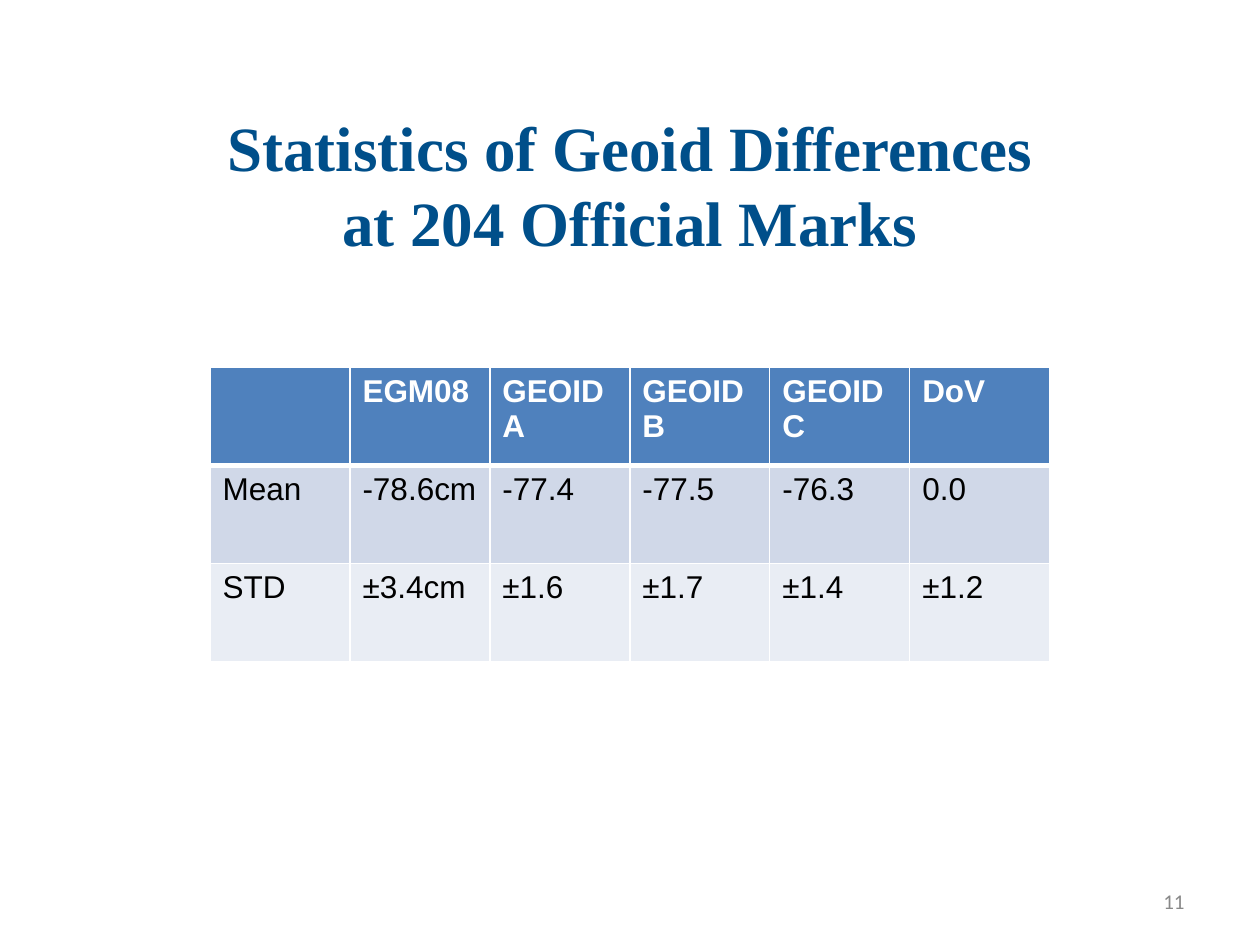
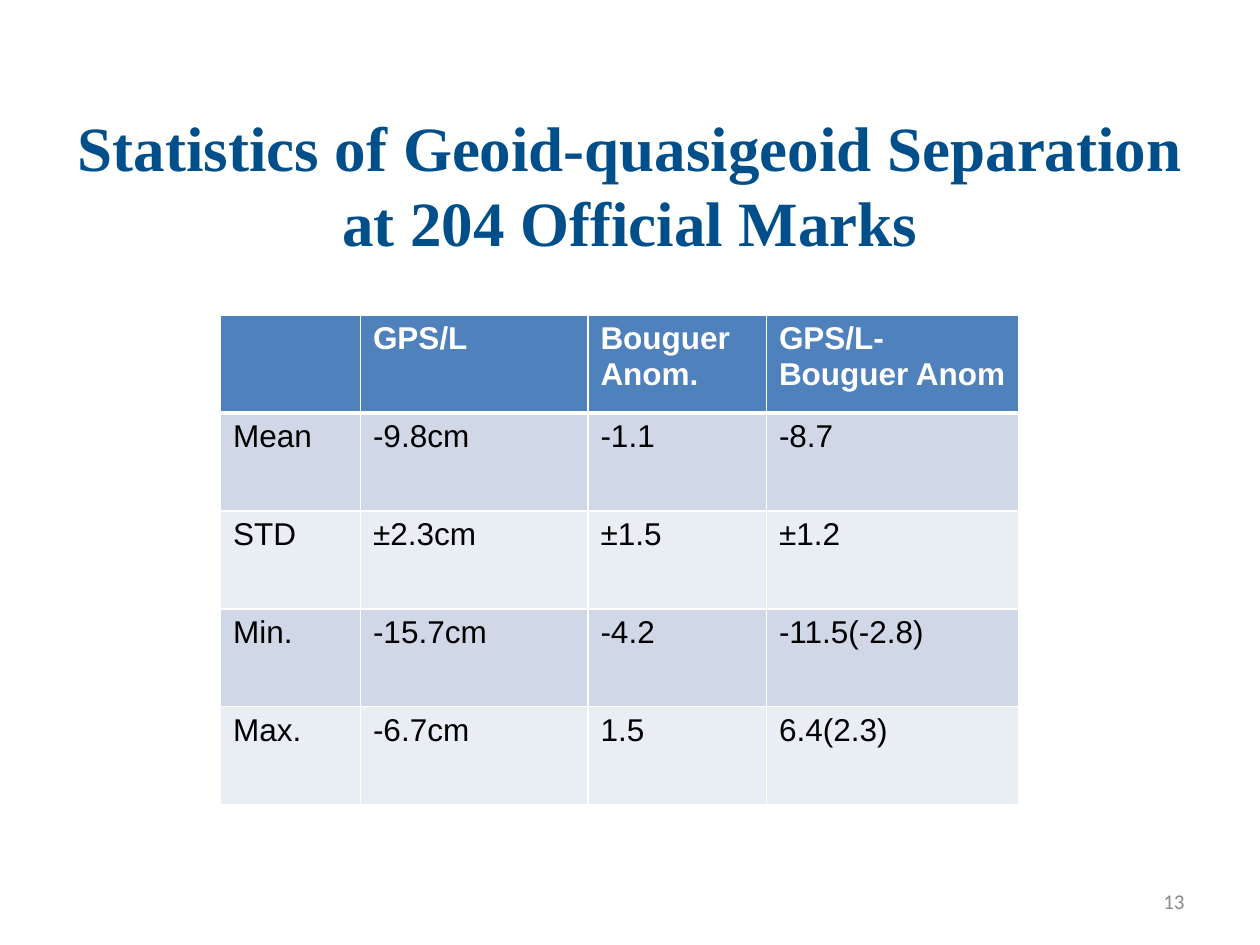
from dataclasses import dataclass
from lxml.etree import SubElement
from pptx import Presentation
from pptx.dml.color import RGBColor
from pptx.enum.text import MSO_ANCHOR, PP_ALIGN
from pptx.oxml.ns import qn
from pptx.util import Inches, Pt


@dataclass(frozen=True)
class Theme:
    # Colours
    white: str = "FFFFFF"
    navy: str = "004F8A"
    grey: str = "898989"
    black: str = "000000"
    head: str = "4F81BD"
    bands: tuple = ("D0D8E8", "E9EDF4")
    # Type: font name, size, bold
    title: tuple = ("Times New Roman", 36, True)
    label: tuple = ("Arial", 18, True)
    value: tuple = ("Arial", 18, False)
    number: tuple = ("Calibri", 12, False)
    # Rule widths in points
    thin: int = 1
    thick: int = 3


class Deck:
    """Places elements on a grid of 120 columns by 90 rows."""

    cols, rows = 120, 90

    def __init__(self, theme):
        self.theme = theme
        self.file = Presentation()
        self.file.slide_width, self.file.slide_height = Inches(10), Inches(7.5)
        self.slide = None

    def x(self, count):
        return round(self.file.slide_width * count / self.cols)

    def y(self, count):
        return round(self.file.slide_height * count / self.rows)

    def style(self, frame, kind, color):
        name, size, bold = kind
        form = {"name": name, "size": Pt(size), "bold": bold}
        for para in frame.paragraphs:
            for run in para.runs:
                for key, value in form.items():
                    setattr(run.font, key, value)
                run.font.color.rgb = RGBColor.from_string(color)

    def text(self, words, place, kind, color, align):
        left, top, width, height = place
        box = self.slide.shapes.add_textbox(
            self.x(left), self.y(top), self.x(width), self.y(height))
        frame = box.text_frame
        frame.word_wrap = True
        frame.vertical_anchor = MSO_ANCHOR.MIDDLE
        para = frame.paragraphs[0]
        para.text = words
        para.alignment = align
        self.style(frame, kind, color)

    def page(self, title, number):
        look = self.theme
        self.slide = self.file.slides.add_slide(self.file.slide_layouts[6])
        self.text(title, (6, 9, 108, 17), look.title, look.navy, PP_ALIGN.CENTER)
        self.text(str(number), (86, 83.4, 28, 4.8), look.number, look.grey,
                  PP_ALIGN.RIGHT)

    def border(self, cell, widths):
        props = cell._tc.get_or_add_tcPr()
        for side, width in widths.items():
            line = SubElement(props, qn(f"a:ln{side}"), w=str(Pt(width)))
            fill = SubElement(line, qn("a:solidFill"))
            SubElement(fill, qn("a:srgbClr"), val=self.theme.white)

    def table(self, left, top, widths, high, data):
        look = self.theme
        grid = self.slide.shapes.add_table(
            len(data), len(widths), self.x(left), self.y(top),
            self.x(sum(widths)), self.y(high * len(data))).table
        for col, width in zip(grid.columns, widths):
            col.width = self.x(width)
        for r, line in enumerate(data):
            # Header row, then alternating bands
            if r == 0:
                kind, color, fill = look.label, look.white, look.head
            else:
                kind, color, fill = look.value, look.black, look.bands[(r - 1) % 2]
            for c, words in enumerate(line):
                cell = grid.cell(r, c)
                self.border(cell, {
                    "L": look.thin, "R": look.thin,
                    "T": look.thick if r == 1 else look.thin,
                    "B": look.thick if r == 0 else look.thin})
                cell.fill.solid()
                cell.fill.fore_color.rgb = RGBColor.from_string(fill)
                cell.text = words
                self.style(cell.text_frame, kind, color)


def main():
    deck = Deck(Theme())
    narrow, high = 13.33, 9.33

    # Geoid differences
    deck.page("Statistics of Geoid Differences\nat 204 Official Marks", 11)
    deck.table(20, 35, [narrow] * 6, high, [
        ["", "EGM08", "GEOIDA", "GEOIDB", "GEOIDC", "DoV"],
        ["Mean", "-78.6cm", "-77.4", "-77.5", "-76.3", "0.0"],
        ["STD", "±3.4cm", "±1.6", "±1.7", "±1.4", "±1.2"],
    ])

    # Geoid-quasigeoid separation
    deck.page("Statistics of Geoid-quasigeoid Separation at 204 Official Marks", 13)
    deck.table(21, 30, [narrow, 21.67, 17, 24], high, [
        ["", "GPS/L", "Bouguer Anom.", "GPS/L-Bouguer Anom"],
        ["Mean", "-9.8cm", "-1.1", "-8.7"],
        ["STD", "±2.3cm", "±1.5", "±1.2"],
        ["Min.", "-15.7cm", "-4.2", "-11.5(-2.8)"],
        ["Max.", "-6.7cm", "1.5", "6.4(2.3)"],
    ])

    deck.file.save("out.pptx")


if __name__ == "__main__":
    main()
